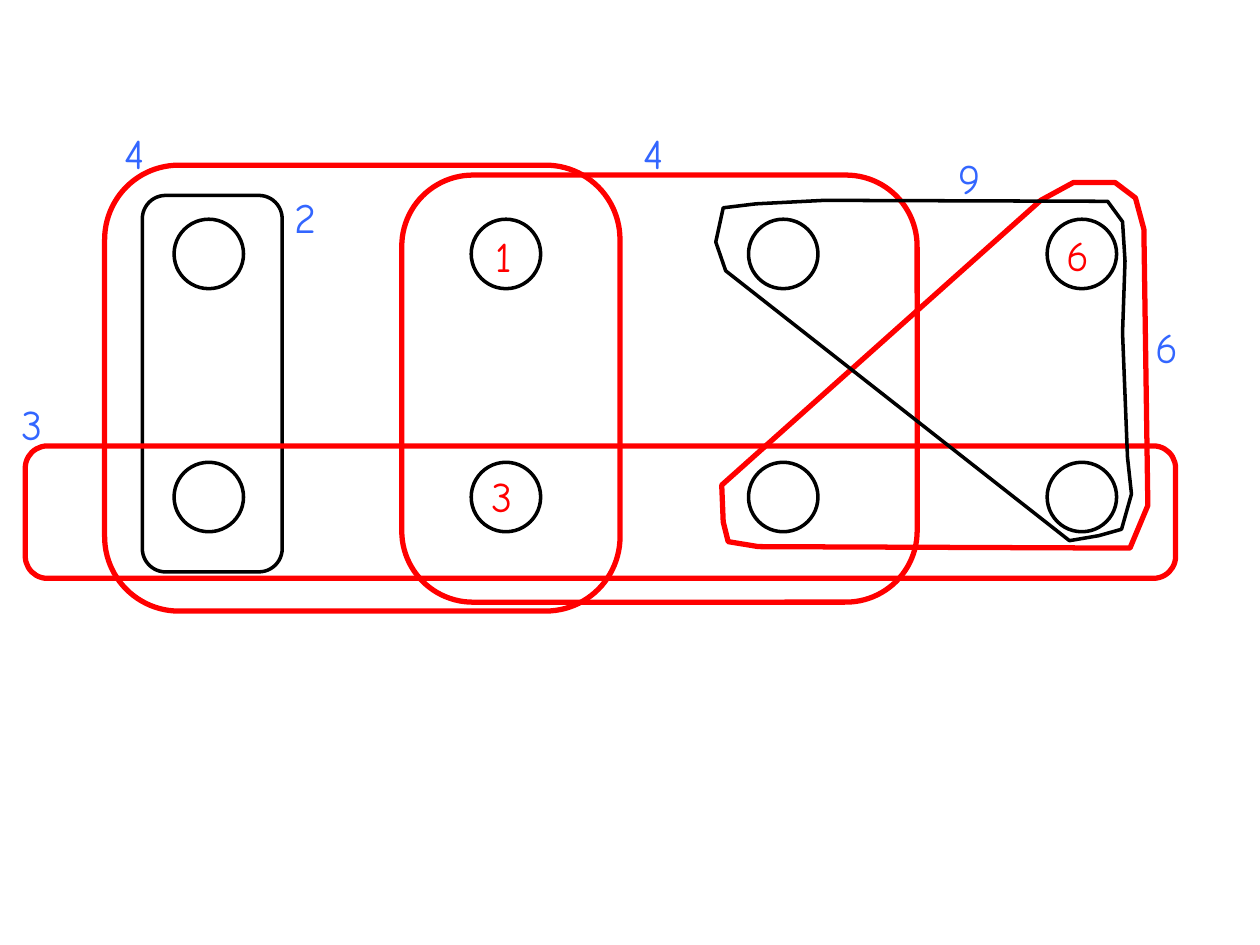
from dataclasses import dataclass
from itertools import product

from pptx import Presentation
from pptx.dml.color import RGBColor as RGB
from pptx.enum.shapes import MSO_SHAPE as Shape
from pptx.enum.text import MSO_AUTO_SIZE as AutoSize
from pptx.util import Cm, Pt

COLORS = {"black": "000000", "red": "FF0000", "blue": "3366FF"}
FONT = "Comic Neue"
NODE_SIZE = 1.4
NODE_XS = (3.51, 9.5, 15.09, 21.11)
NODE_YS = (4.42, 9.32)
LABEL_SIZE = 1.27


@dataclass
class Box:
    x: float
    y: float
    w: float
    h: float
    color: str


@dataclass
class Loop:
    points: list[tuple[float, float]]
    color: str


@dataclass
class Label:
    text: str
    x: float
    y: float
    color: str = "blue"


BOXES = [
    Box(2.11, 3.33, 10.39, 8.99, "red"),
    Box(8.1, 3.53, 10.39, 8.61, "red"),
    Box(2.87, 3.94, 2.82, 7.59, "black"),
    Box(0.51, 8.99, 23.19, 2.67, "red"),
]
LOOPS = [
    Loop([(14.55, 9.78), (20.98, 4.04), (21.64, 3.68), (22.48, 3.68),
          (22.89, 3.99), (23.06, 4.62), (23.14, 10.19), (22.78, 11.05),
          (15.29, 11.02), (14.68, 10.92), (14.58, 10.52)], "red"),
    Loop([(14.43, 4.88), (14.58, 4.19), (15.24, 4.11), (16.61, 4.04),
          (22.33, 4.06), (22.63, 4.47), (22.68, 5.26), (22.63, 6.71),
          (22.73, 9.22), (22.81, 9.96), (22.61, 10.67), (22.15, 10.8),
          (21.56, 10.9), (14.63, 5.46)], "black"),
]
LABELS = [
    Label("4", 2.26, 2.44),
    Label("4", 12.73, 2.44),
    Label("2", 5.69, 3.73),
    Label("3", 0.18, 7.9),
    Label("9", 19.08, 2.95),
    Label("6", 23.04, 6.35),
    Label("3", 9.65, 9.37, "red"),
    Label("1", 9.73, 4.52, "red"),
    Label("6", 21.26, 4.5, "red"),
]


def style_outline(sp, color: str) -> None:
    sp.shadow.inherit = False
    sp.fill.background()
    sp.line.color.rgb = RGB.from_string(COLORS[color])
    sp.line.width = Pt(3 if color == "red" else 2)


def draw_box(s, kind: Shape, box: Box) -> None:
    sp = s.shapes.add_shape(kind, Cm(box.x), Cm(box.y), Cm(box.w), Cm(box.h))
    style_outline(sp, box.color)


def draw_loop(s, loop: Loop) -> None:
    start, *rest = [(Cm(x), Cm(y)) for x, y in loop.points]
    builder = s.shapes.build_freeform(*start)
    builder.add_line_segments(rest, close=True)
    style_outline(builder.convert_to_shape(), loop.color)


def draw_label(s, label: Label) -> None:
    sp = s.shapes.add_textbox(Cm(label.x), Cm(label.y), Cm(LABEL_SIZE), Cm(LABEL_SIZE))
    tf = sp.text_frame
    tf.word_wrap = True
    tf.auto_size = AutoSize.SHAPE_TO_FIT_TEXT
    p = tf.paragraphs[0]
    p.text = label.text
    p.font.name = FONT
    p.font.size = Pt(24)
    p.font.color.rgb = RGB.from_string(COLORS[label.color])


def main() -> None:
    prs = Presentation()
    prs.slide_width, prs.slide_height = Cm(25.4), Cm(19.05)
    s = prs.slides.add_slide(prs.slide_layouts[6])
    for x, y in product(NODE_XS, NODE_YS):
        draw_box(s, Shape.OVAL, Box(x, y, NODE_SIZE, NODE_SIZE, "black"))
    for box in BOXES:
        draw_box(s, Shape.ROUNDED_RECTANGLE, box)
    for loop in LOOPS:
        draw_loop(s, loop)
    for label in LABELS:
        draw_label(s, label)
    prs.save("out.pptx")


if __name__ == "__main__":
    main()
